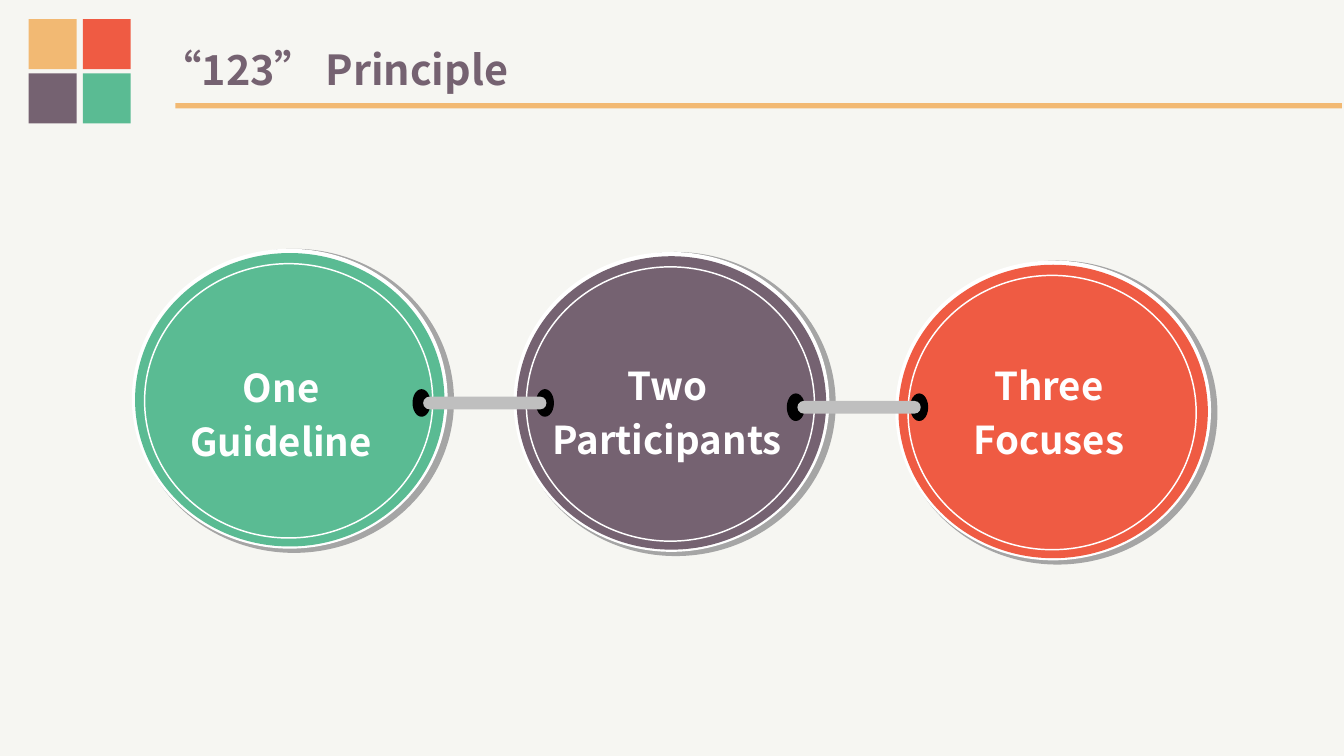
from pptx import Presentation
from pptx.dml.color import RGBColor
from pptx.enum.shapes import MSO_SHAPE
from pptx.enum.text import MSO_ANCHOR, MSO_AUTO_SIZE, PP_ALIGN
from pptx.util import Inches, Pt

FONT = "Noto Sans CJK SC"
HUES = {
    "paper": "F6F6F2",
    "gold": "F2B973",
    "red": "EF5B43",
    "plum": "756271",
    "green": "5ABB93",
    "shade": "A5A5A5",
    "bar": "BFBFBF",
    "white": "FFFFFF",
    "black": "000000",
}
TILES = ["gold", "red", "plum", "green"]
DISCS = [
    (1.24, 2.34, "green", 1.34, 3.37, "One\nGuideline"),
    (4.83, 2.37, "plum", 4.97, 3.35, "Two\nParticipants"),
    (8.42, 2.45, "red", 8.56, 3.35, "Three\nFocuses"),
]
LINKS = [(7.4, 3.7), (3.88, 3.66)]


def tint(name):
    """Return the named colour."""
    return RGBColor.from_string(HUES[name])


def place(item, left, top, width, height):
    """Set the position and size of an item in inches."""
    item.left, item.top = Inches(left), Inches(top)
    item.width, item.height = Inches(width), Inches(height)


def add_form(slide, kind, box, hue):
    """Add a flat filled shape without an outline."""
    form = slide.shapes.add_shape(kind, *map(Inches, box))
    form.shadow.inherit = False
    form.fill.solid()
    form.fill.fore_color.rgb = tint(hue)
    form.line.fill.background()
    return form


def add_ring(slide, box):
    """Add a thin white circle outline."""
    ring = add_form(slide, MSO_SHAPE.OVAL, box, "white")
    ring.fill.background()
    ring.line.color.rgb = tint("white")
    ring.line.width = Pt(1)


def write(item, text, size, hue, align):
    """Fill an item with bold text that has no margins."""
    frame = item.text_frame
    frame.text = text
    frame.word_wrap = True
    frame.auto_size = MSO_AUTO_SIZE.SHAPE_TO_FIT_TEXT
    frame.vertical_anchor = MSO_ANCHOR.MIDDLE
    frame.margin_left = frame.margin_right = 0
    frame.margin_top = frame.margin_bottom = 0
    for line in frame.paragraphs:
        line.alignment = align
        line.line_spacing = 1.16
        line.space_before = Pt(0)
        for run in line.runs:
            run.font.name = FONT
            run.font.size = Pt(size)
            run.font.bold = True
            run.font.color.rgb = tint(hue)


def add_disc(slide, left, top, hue):
    """Add a coloured disc with its shade, rim and inner ring."""
    layers = [
        (0.02, 0, 3.01, 2.86, "shade"),
        (0, 0, 2.97, 2.82, "white"),
        (0.03, 0.04, 2.91, 2.76, hue),
    ]
    for x, y, width, height, name in layers:
        box = (left + x, top + y, width, height)
        add_form(slide, MSO_SHAPE.OVAL, box, name)
    add_ring(slide, (left + 0.12, top + 0.14, 2.71, 2.58))


def add_label(slide, left, top, text):
    """Add the centred white label of a disc."""
    label = slide.shapes.add_textbox(0, 0, 0, 0)
    write(label, text, 26, "white", PP_ALIGN.CENTER)
    place(label, left, top, 2.61, 0.98)


def add_link(slide, left, top):
    """Add a bar that joins two black holes."""
    for x in (1.16, 0):
        box = (left + x, top, 0.17, 0.26)
        add_form(slide, MSO_SHAPE.OVAL, box, "black")
    box = (left + 0.1, top + 0.07, 1.16, 0.12)
    bar = add_form(slide, MSO_SHAPE.ROUNDED_RECTANGLE, box, "bar")
    bar.adjustments[0] = 0.5


def add_head(slide):
    """Add the title, its rule and the four tiles."""
    title = slide.shapes.title
    write(title, "“123” Principle", 28, "plum", PP_ALIGN.LEFT)
    place(title, 1.51, 0.36, 3.67, 0.5)
    add_form(slide, MSO_SHAPE.RECTANGLE, (1.65, 0.97, 10.97, 0.05), "gold")
    for i, hue in enumerate(TILES):
        row, col = divmod(i, 2)
        box = (0.27 + col * 0.51, 0.18 + row * 0.51, 0.45, 0.47)
        add_form(slide, MSO_SHAPE.RECTANGLE, box, hue)


def main():
    """Build the slide and save it."""
    deck = Presentation()
    deck.slide_width, deck.slide_height = Inches(12.64), Inches(7.11)
    slide = deck.slides.add_slide(deck.slide_layouts[5])
    slide.background.fill.solid()
    slide.background.fill.fore_color.rgb = tint("paper")
    add_head(slide)
    for left, top, hue, x, y, text in DISCS:
        add_disc(slide, left, top, hue)
        add_label(slide, x, y, text)
    for left, top in LINKS:
        add_link(slide, left, top)
    deck.save("out.pptx")


if __name__ == "__main__":
    main()
